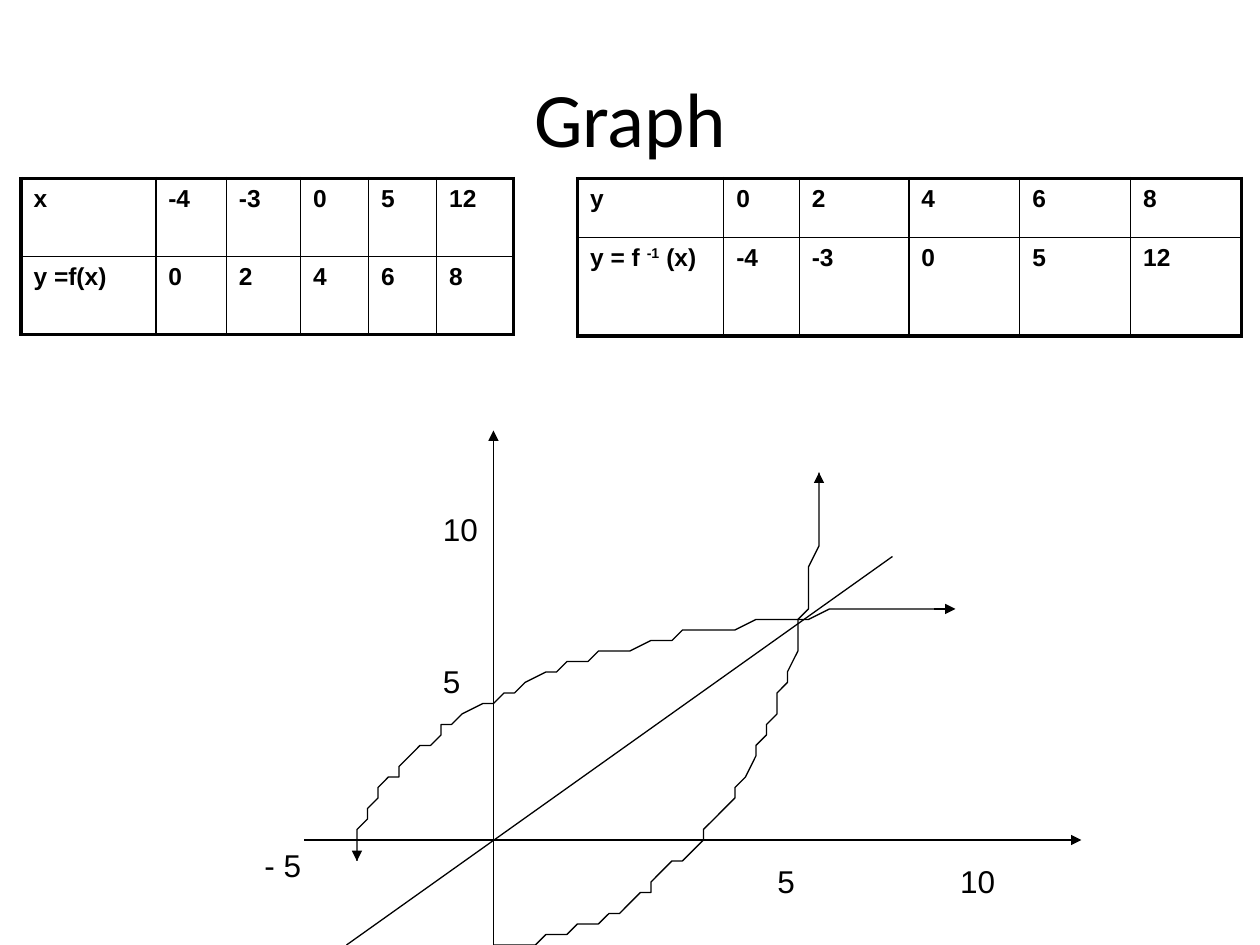
import math

import pptx
import pptx.dml.color
import pptx.enum.text
import pptx.oxml.ns
import pptx.util
from lxml import etree

BLACK = pptx.dml.color.RGBColor(0, 0, 0)
UNIT = pptx.util.Inches(10) / 120
THIN, THICK = 0.75, 2.25
CELL_LINE = 1
CURVE_STEPS = 48
ORIGIN = (47, 80)


def grid(count):
    return pptx.util.Emu(round(count * UNIT))


def add_element(parent, tag, **attributes):
    return etree.SubElement(parent, pptx.oxml.ns.qn(tag), attributes)


def format_span(span, size, font="Arial", bold=False):
    span.font.size = pptx.util.Pt(size)
    span.font.name = font
    span.font.bold = bold
    span.font.color.rgb = BLACK


def add_label(page, area, text, size=18, font="Arial"):
    box = page.shapes.add_textbox(*map(grid, area))
    frame = box.text_frame
    frame.word_wrap = True
    frame.margin_right = 0
    frame.text = text
    for para in frame.paragraphs:
        for span in para.runs:
            format_span(span, size, font)
    return frame


def add_title(page, text):
    frame = add_label(page, (6, 3.6, 108, 15), text, 44, "Calibri")
    frame.margin_right = frame.margin_left
    frame.vertical_anchor = pptx.enum.text.MSO_ANCHOR.MIDDLE
    frame.paragraphs[0].alignment = pptx.enum.text.PP_ALIGN.CENTER


def set_borders(cell, outer_sides):
    properties = cell._tc.get_or_add_tcPr()
    for side in "LRTB":
        width = THICK if side in outer_sides else CELL_LINE
        line = add_element(properties, f"a:ln{side}", w=str(pptx.util.Pt(width)))
        fill = add_element(line, "a:solidFill")
        add_element(fill, "a:srgbClr", val=str(BLACK))
    cell.fill.background()


def fill_cell(cell, text):
    para = cell.text_frame.paragraphs[0]
    for index, part in enumerate(text.split("^")):
        span = para.add_run()
        span.text = part
        format_span(span, 14, bold=True)
        if index == 1:
            span.font._element.set("baseline", "30000")


def add_values(page, left, widths, heights, rows):
    frame = page.shapes.add_table(
        len(rows), len(widths), grid(left), grid(17),
        pptx.util.Inches(sum(widths)), pptx.util.Inches(sum(heights)))
    table = frame.table
    table.first_row = False
    table.horz_banding = False
    for column, width in zip(table.columns, widths):
        column.width = pptx.util.Inches(width)
    for row, height in zip(table.rows, heights):
        row.height = pptx.util.Inches(height)
    last_row, last_column = len(rows) - 1, len(widths) - 1
    for r, texts in enumerate(rows):
        for c, text in enumerate(texts):
            edges = {"L": c == 0, "R": c == last_column,
                     "T": r == 0, "B": r == last_row}
            cell = table.cell(r, c)
            fill_cell(cell, text)
            set_borders(cell, [side for side, outer in edges.items() if outer])


def style_line(shape):
    shape.line.color.rgb = BLACK
    shape.line.width = pptx.util.Pt(THIN)


def add_line(page, start, end, arrow=True):
    line = page.shapes.add_connector(
        pptx.enum.shapes.MSO_CONNECTOR.STRAIGHT, *map(grid, start + end))
    style_line(line)
    if arrow:
        add_element(line.line._get_or_add_ln(), "a:tailEnd", type="triangle")
    add_element(line._element.spPr, "a:effectLst")


def add_quarter_ellipse(page, center, reach):
    angles = [math.pi / 2 * step / CURVE_STEPS for step in range(CURVE_STEPS + 1)]
    points = [(center[0] + reach[0] * math.sin(angle),
               center[1] + reach[1] * math.cos(angle)) for angle in angles]
    builder = page.shapes.build_freeform(*points[0], scale=UNIT)
    builder.add_line_segments(points[1:], close=False)
    curve = builder.convert_to_shape()
    curve.shadow.inherit = False
    curve.fill.background()
    style_line(curve)


def add_axis_labels(page):
    add_label(page, (24, 80, 5.9, 4.8), "- 5")

    frame = add_label(page, (67.8, 81.5, 28.2, 4.8), "5\t10")
    frame.margin_left = pptx.util.Inches(0.52)
    properties = frame.paragraphs[0]._p.get_or_add_pPr()
    stops = add_element(properties, "a:tabLst")
    add_element(stops, "a:tab", pos=str(pptx.util.Inches(1.45)), algn="l")

    frame = add_label(page, (41, 48, 5.8, 19.2), "10\n5")
    frame.paragraphs[1].space_before = pptx.util.Pt(65)


def add_graph(page):
    add_line(page, (29, ORIGIN[1]), (103, ORIGIN[1]))
    add_line(page, (ORIGIN[0], 90), (ORIGIN[0], 41))
    add_quarter_ellipse(page, (90, 82), (-56, -24))
    add_quarter_ellipse(page, (ORIGIN[0], 45), (31, 45))
    add_line(page, (33, 90), (85, 53), arrow=False)
    add_axis_labels(page)
    add_line(page, (89, 58), (91, 58))
    add_line(page, (34, 81), (34, 82))
    add_line(page, (78, 45), (78, 45))
    add_line(page, (78, 46), (78, 45))


def main():
    deck = pptx.Presentation()
    deck.slide_width, deck.slide_height = grid(120), grid(90)
    page = deck.slides.add_slide(deck.slide_layouts[6])
    inputs = ["-4", "-3", "0", "5", "12"]
    outputs = ["0", "2", "4", "6", "8"]
    add_title(page, "Graph")
    add_values(page, 2, [1.07, 0.56, 0.59, 0.54, 0.54, 0.61], [0.62, 0.62],
               [["x"] + inputs, ["y =f(x)"] + outputs])
    add_values(page, 55, [1.16, 0.6, 0.87, 0.88, 0.88, 0.88], [0.47, 0.78],
               [["y"] + outputs, ["y = f ^-1^ (x)"] + inputs])
    add_graph(page)
    deck.save("out.pptx")


if __name__ == "__main__":
    main()
